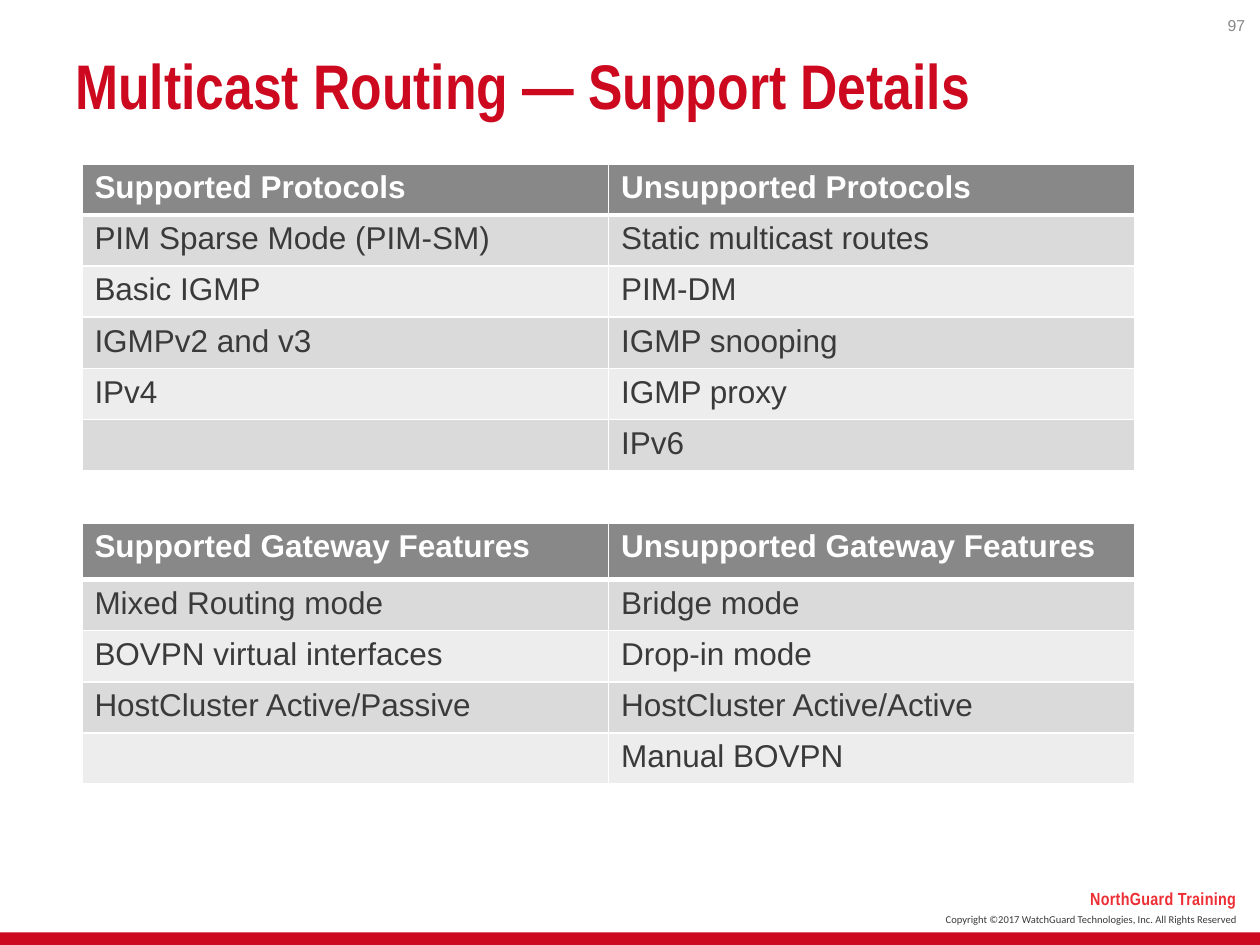
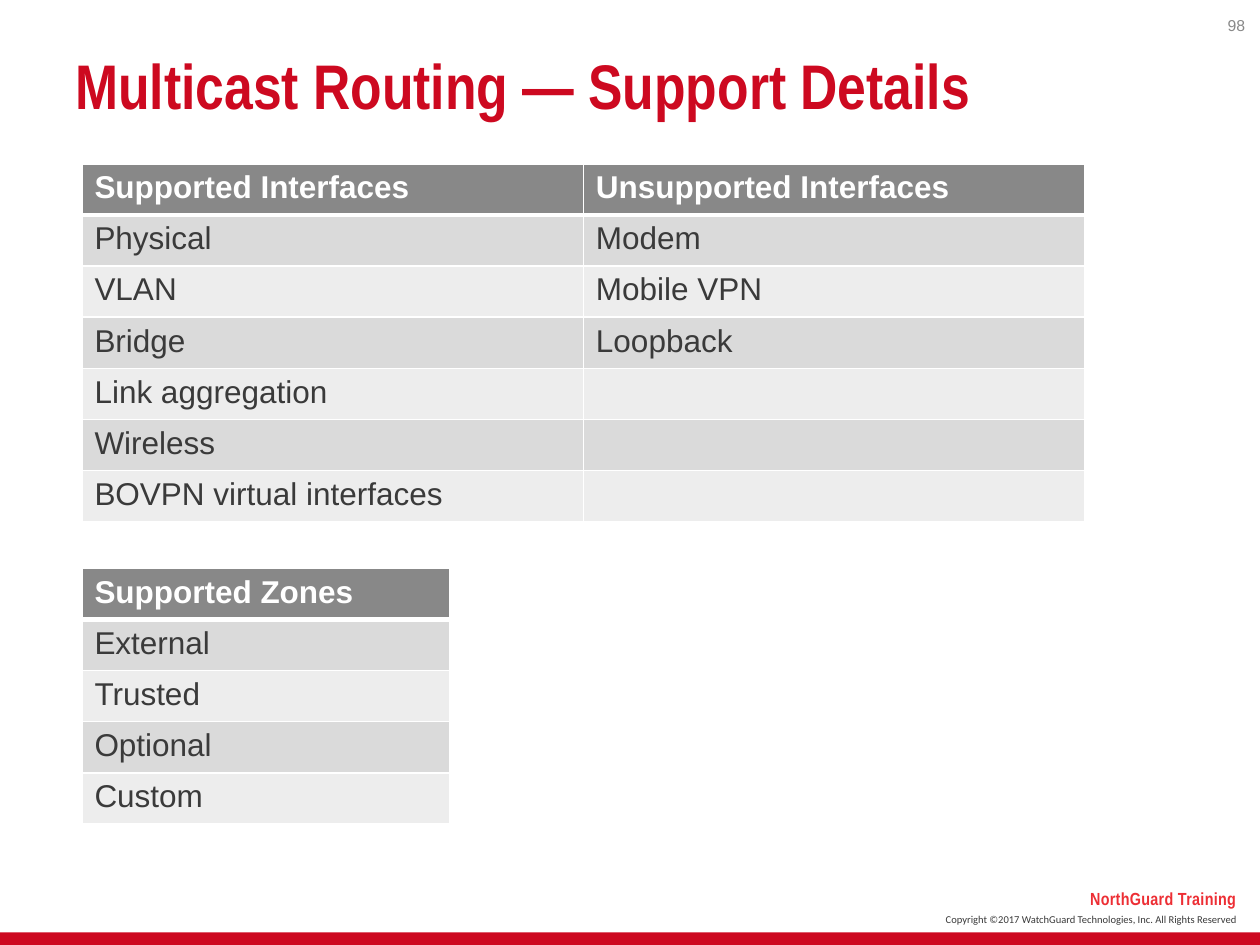
from lxml.etree import SubElement
from pptx import Presentation
from pptx.dml.color import RGBColor
from pptx.enum.shapes import MSO_SHAPE
from pptx.enum.text import MSO_ANCHOR, PP_ALIGN
from pptx.oxml.ns import qn
from pptx.util import Inches, Pt

COLS, ROWS = 100, 75
WIDTH, HEIGHT = Inches(10), Inches(7.5)
RED, BRAND_RED, WHITE, INK, GREY = "CD0920", "ED2E34", "FFFFFF", "3A3A3A", "898989"
HEADER_FILL, BANDS = "888888", ("DADADA", "EDEDED")
ROW_H, TABLE_LEFT, TABLE_TOP = 4.06, 6.5, 13

TITLE_FONT = {"name": "Arial Narrow", "size": 36, "bold": True, "color": RED}
NUMBER_FONT = {"name": "Arial", "size": 9, "color": GREY}
BRAND_FONT = {"name": "Arial Narrow", "size": 10, "bold": True, "color": BRAND_RED}
COPYRIGHT_FONT = {"name": "Calibri", "size": 6, "color": INK}
HEADER_FONT = {"name": "Arial", "size": 18, "bold": True, "color": WHITE}
BODY_FONT = {"name": "Arial", "size": 18, "bold": False, "color": INK}

SLIDES = [
    (97, [
        {"top": TABLE_TOP, "col_w": 41.8, "header_h": ROW_H, "rows": [
            ("Supported Protocols", "Unsupported Protocols"),
            ("PIM Sparse Mode (PIM-SM)", "Static multicast routes"),
            ("Basic IGMP", "PIM-DM"),
            ("IGMPv2 and v3", "IGMP snooping"),
            ("IPv4", "IGMP proxy"),
            ("", "IPv6")]},
        {"top": 41.5, "col_w": 41.8, "header_h": 4.5, "rows": [
            ("Supported Gateway Features", "Unsupported Gateway Features"),
            ("Mixed Routing mode", "Bridge mode"),
            ("BOVPN virtual interfaces", "Drop-in mode"),
            ("HostCluster Active/Passive", "HostCluster Active/Active"),
            ("", "Manual BOVPN")]},
    ]),
    (98, [
        {"top": TABLE_TOP, "col_w": 39.8, "header_h": ROW_H, "rows": [
            ("Supported Interfaces", "Unsupported Interfaces"),
            ("Physical", "Modem"),
            ("VLAN", "Mobile VPN"),
            ("Bridge", "Loopback"),
            ("Link aggregation", ""),
            ("Wireless", ""),
            ("BOVPN virtual interfaces", "")]},
        {"top": 45.1, "col_w": 29.2, "header_h": ROW_H, "rows": [
            ("Supported Zones",), ("External",), ("Trusted",), ("Optional",), ("Custom",)]},
    ]),
]


def rgb(hex_text):
    """Turn a hex string into a colour."""
    return RGBColor.from_string(hex_text)


def across(n):
    """Give the length of n grid columns."""
    return round(WIDTH * n / COLS)


def down(n):
    """Give the length of n grid rows."""
    return round(HEIGHT * n / ROWS)


def place(left, top, width, height):
    """Turn a box in grid units into slide lengths."""
    return across(left), down(top), across(width), down(height)


def style(font, values):
    """Set the attributes of a font from a dict."""
    for name, value in values.items():
        if name == "color":
            font.color.rgb = rgb(value)
        else:
            setattr(font, name, Pt(value) if name == "size" else value)


def add_text(slide, box, text, font, align=PP_ALIGN.LEFT, anchor=MSO_ANCHOR.TOP, inset=True):
    """Add one line of styled text and return its run."""
    tf = slide.shapes.add_textbox(*place(*box)).text_frame
    tf.word_wrap, tf.vertical_anchor = True, anchor
    if not inset:
        for side in ("left", "top", "right", "bottom"):
            setattr(tf, f"margin_{side}", 0)
    p = tf.paragraphs[0]
    p.alignment = align
    r = p.add_run()
    r.text = text
    style(r.font, font)
    return r


def add_borders(cell, top, bottom):
    """Draw white cell borders of the given top and bottom widths."""
    tc_pr = cell._tc.get_or_add_tcPr()
    for side, width in (("L", 1), ("R", 1), ("T", top), ("B", bottom)):
        ln = SubElement(tc_pr, qn(f"a:ln{side}"), w=str(Pt(width)))
        SubElement(SubElement(ln, qn("a:solidFill")), qn("a:srgbClr"), val=WHITE)


def add_support_table(slide, top, col_w, header_h, rows):
    """Place a banded table with a header row at the left margin."""
    n_cols = len(rows[0])
    box = place(TABLE_LEFT, top, col_w * n_cols, header_h + ROW_H * (len(rows) - 1))
    table = slide.shapes.add_table(len(rows), n_cols, *box).table
    for column in table.columns:
        column.width = across(col_w)
    for i, texts in enumerate(rows):
        table.rows[i].height = down(ROW_H if i else header_h)
        for j, text in enumerate(texts):
            cell = table.cell(i, j)
            add_borders(cell, 3 if i == 1 else 1, 1 if i else 3)
            cell.fill.solid()
            cell.fill.fore_color.rgb = rgb(BANDS[(i - 1) % 2] if i else HEADER_FILL)
            cell.text = text
            p = cell.text_frame.paragraphs[0]
            for part in p.runs or [p]:
                style(part.font, BODY_FONT if i else HEADER_FONT)


def add_footer(slide):
    """Place the bottom band, copyright line and training label."""
    band = slide.shapes.add_shape(MSO_SHAPE.RECTANGLE, *place(0, ROWS - 1, COLS, 1))
    band.shadow.inherit = False
    band.fill.solid()
    band.fill.fore_color.rgb = rgb(RED)
    band.line.fill.background()
    add_text(slide, (64.7, 72, 34.4, 2),
             "Copyright ©2017 WatchGuard Technologies, Inc. All Rights Reserved",
             COPYRIGHT_FONT, PP_ALIGN.RIGHT)
    r = add_text(slide, (83.2, 70.5, 14.9, 1.7), "NorthGuard Training",
                 BRAND_FONT, PP_ALIGN.RIGHT, inset=False)
    r.font._element.set("spc", "20")


def add_heading(slide, number):
    """Place the title and the slide number."""
    add_text(slide, (5, 3, 90, 7.4), "Multicast Routing — Support Details",
             TITLE_FONT, anchor=MSO_ANCHOR.MIDDLE)
    add_text(slide, (93.3, 0.2, 6.5, 3.6), str(number), NUMBER_FONT,
             PP_ALIGN.RIGHT, MSO_ANCHOR.MIDDLE)


def add_support_slide(prs, number, tables):
    """Build one slide of support tables."""
    slide = prs.slides.add_slide(prs.slide_layouts[6])
    add_footer(slide)
    add_heading(slide, number)
    for table in tables:
        add_support_table(slide, **table)


def main():
    """Build and save the presentation."""
    prs = Presentation()
    prs.slide_width, prs.slide_height = WIDTH, HEIGHT
    for number, tables in SLIDES:
        add_support_slide(prs, number, tables)
    prs.save("out.pptx")


if __name__ == "__main__":
    main()
